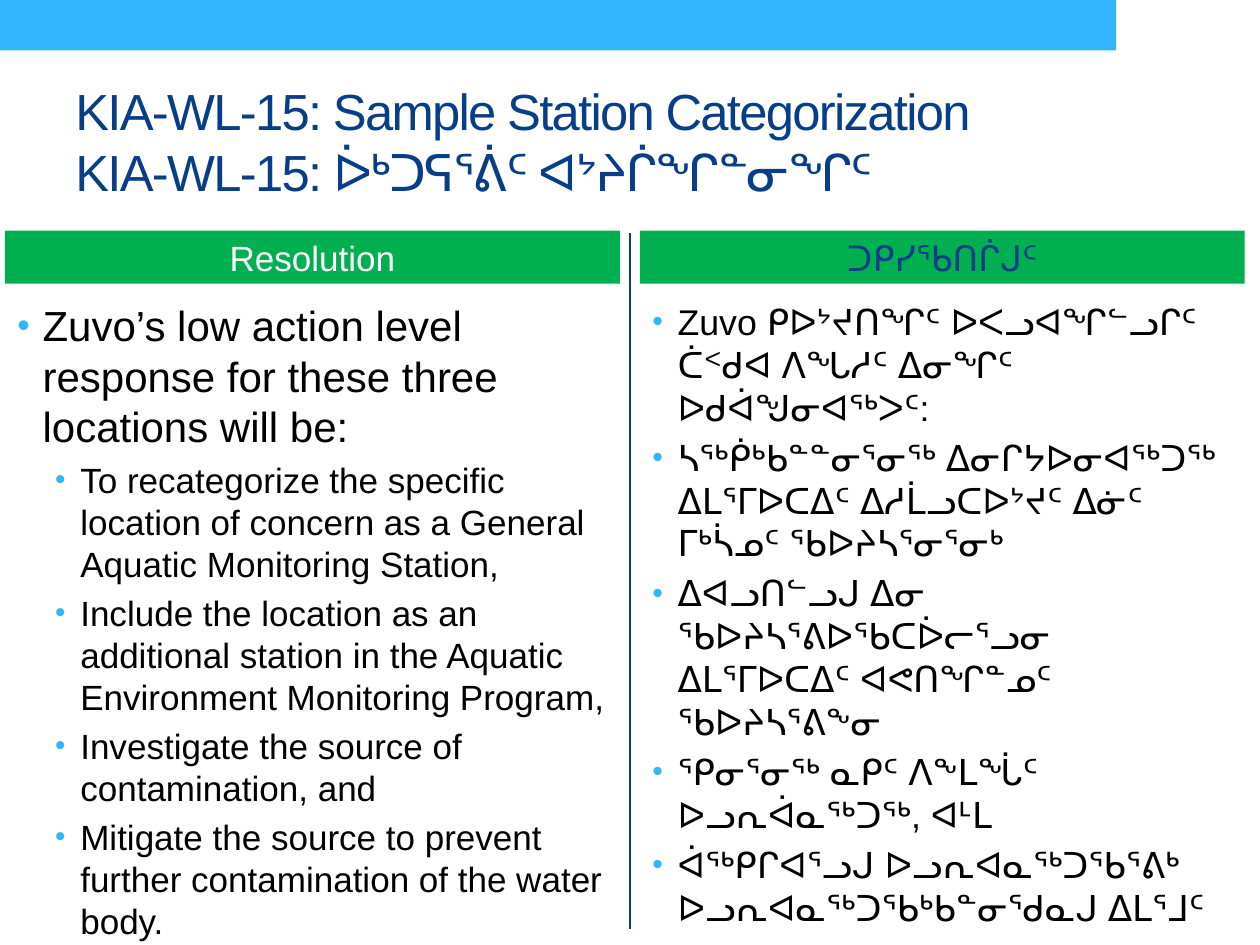
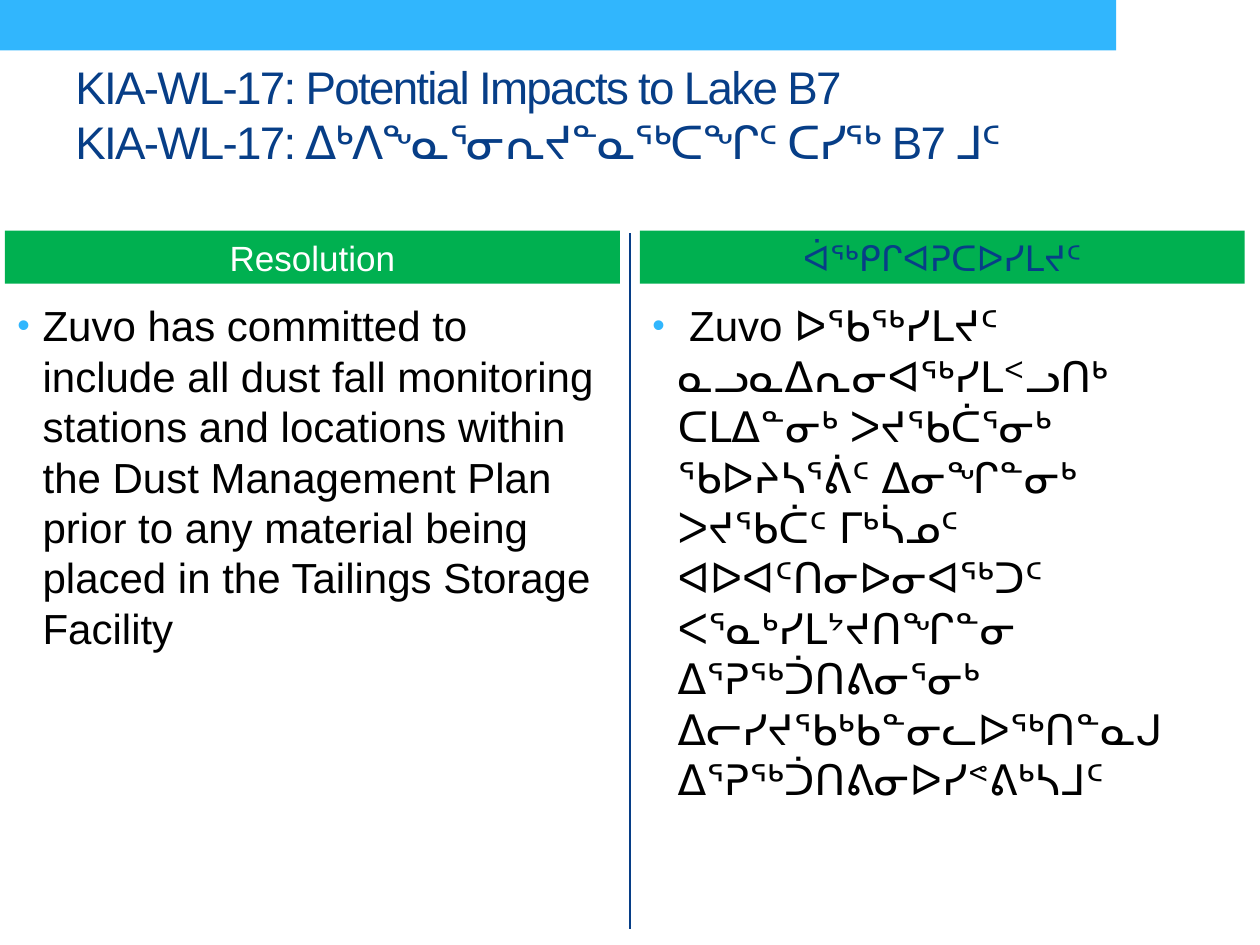
from pptx import Presentation
from pptx import util as u
from pptx.dml.color import RGBColor
from pptx.enum import shapes, text
from pptx.oxml.ns import qn
from lxml import etree

SKY = RGBColor(0x31, 0xB6, 0xFD)
NAVY = RGBColor(0x07, 0x3E, 0x87)
GREEN = RGBColor(0x00, 0xB0, 0x50)
WHITE = RGBColor(0xFF, 0xFF, 0xFF)
BLACK = RGBColor(0x00, 0x00, 0x00)
FONT = "Arial"

# Boxes in centimetres: left, top, width, height
BAND = (0, 0, 22.5, 1.02)
TITLE = (1.27, 1.47, 22.86, 2.74)
LEFT_COLUMN = (0.1, 4.65, 12.4, 14.07)
RIGHT_COLUMN = (12.9, 4.65, 12.19, 14.07)
DIVIDER_X, DIVIDER_TOP, DIVIDER_BOTTOM = 12.7, 4.7, 18.72
HEADING_HEIGHT = 1.07
BODY_OFFSET = 1.27
BULLET_HANG = 0.51
LEVEL_INDENTS = (0.51, 1.27)


def lengths(box):
    return [u.Cm(value) for value in box]


def write(paragraph, content, size, color, spacing=None):
    """Fill a paragraph with one format; a vertical tab is a line break."""
    paragraph.text = content
    for run in paragraph.runs:
        run.font.name = FONT
        run.font.size = u.Pt(size)
        run.font.color.rgb = color
        if spacing is not None:
            run.font._element.set("spc", str(spacing))


def add_bullet(paragraph, level):
    properties = paragraph._p.get_or_add_pPr()
    properties.set("marL", str(u.Cm(LEVEL_INDENTS[level])))
    properties.set("indent", str(-u.Cm(BULLET_HANG)))
    color = etree.SubElement(properties, qn("a:buClr"))
    etree.SubElement(color, qn("a:srgbClr"), val=str(SKY))
    etree.SubElement(properties, qn("a:buSzPct"), val="85000")
    etree.SubElement(properties, qn("a:buFont"), typeface=FONT)
    etree.SubElement(properties, qn("a:buChar"), char="•")


def add_bar(slide, box, color):
    bar = slide.shapes.add_shape(shapes.MSO_SHAPE.RECTANGLE, *lengths(box))
    bar.shadow.inherit = False
    bar.fill.solid()
    bar.fill.fore_color.rgb = color
    bar.line.fill.background()
    return bar


def add_frame(slide, box, anchor):
    frame = slide.shapes.add_textbox(*lengths(box)).text_frame
    frame.word_wrap = True
    frame.vertical_anchor = anchor
    return frame


def add_backdrop(slide):
    # Top band and the line between the columns
    add_bar(slide, BAND, SKY)
    divider = slide.shapes.add_connector(
        shapes.MSO_CONNECTOR.STRAIGHT,
        u.Cm(DIVIDER_X), u.Cm(DIVIDER_TOP), u.Cm(DIVIDER_X), u.Cm(DIVIDER_BOTTOM))
    divider.line.color.rgb = NAVY
    divider.line.width = u.Pt(1.5)
    etree.SubElement(divider._element.spPr, qn("a:effectLst"))


def add_title(slide, content, size, lift):
    left, top, width, height = TITLE
    frame = add_frame(slide, (left, top - lift, width, height), text.MSO_ANCHOR.MIDDLE)
    write(frame.paragraphs[0], content, size, NAVY, spacing=-100)


def add_column(slide, box, heading, heading_color, items):
    """Place a heading bar and bullets; items are (level, size, content)."""
    left, top, width, height = box
    # Heading
    bar = add_bar(slide, (left, top, width, HEADING_HEIGHT), GREEN)
    bar.text_frame.word_wrap = True
    bar.text_frame.vertical_anchor = text.MSO_ANCHOR.MIDDLE
    paragraph = bar.text_frame.paragraphs[0]
    paragraph.alignment = text.PP_ALIGN.CENTER
    write(paragraph, heading, 20, heading_color)
    # Bullets
    frame = add_frame(slide, (left, top + BODY_OFFSET, width, height - BODY_OFFSET),
                      text.MSO_ANCHOR.TOP)
    for index, (level, size, content) in enumerate(items):
        paragraph = frame.add_paragraph() if index else frame.paragraphs[0]
        if index:
            paragraph.space_before = u.Pt(round(size * 0.2, 1))
        add_bullet(paragraph, level)
        write(paragraph, content, size, BLACK)


def add_resolution_slide(presentation, title, title_size, inuktitut_heading,
                         english, inuktitut, title_lift=0):
    slide = presentation.slides.add_slide(presentation.slide_layouts[6])
    add_backdrop(slide)
    add_title(slide, title, title_size, title_lift)
    add_column(slide, LEFT_COLUMN, "Resolution", WHITE, english)
    add_column(slide, RIGHT_COLUMN, inuktitut_heading, NAVY, inuktitut)


def main():
    presentation = Presentation()
    presentation.slide_width = u.Cm(25.4)
    presentation.slide_height = u.Cm(19.05)

    # Sample station categorization
    actions = (
        "To recategorize the specific location of concern as a General Aquatic Monitoring Station,",
        "Include the location as an additional station in the Aquatic Environment Monitoring Program,",
        "Investigate the source of contamination, and",
        "Mitigate the source to prevent further contamination of the water body.",
    )
    inuktitut_actions = (
        "Zuvo ᑭᐅᔾᔪᑎᖏᑦ ᐅᐸᓗᐊᖏᓪᓗᒋᑦ ᑖᑉᑯᐊ ᐱᖓᓱᑦ ᐃᓂᖏᑦ ᐅᑯᐋᖑᓂᐊᖅᐳᑦ:",
        "ᓴᖅᑮᒃᑲᓐᓐᓂᕐᓂᖅ ᐃᓂᒋᔭᐅᓂᐊᖅᑐᖅ ᐃᒪᕐᒥᐅᑕᐃᑦ ᐃᓱᒫᓗᑕᐅᔾᔪᑦ ᐃᓃᑦ ᒥᒃᓵᓄᑦ ᖃᐅᔨᓴᕐᓂᕐᓂᒃ",
        "ᐃᐊᓗᑎᓪᓗᒍ ᐃᓂ ᖃᐅᔨᓴᕐᕕᐅᖃᑕᐆᓕᕐᓗᓂ ᐃᒪᕐᒥᐅᑕᐃᑦ ᐊᕙᑎᖏᓐᓄᑦ ᖃᐅᔨᓴᕐᕕᖕᓂ",
        "ᕿᓂᕐᓂᖅ ᓇᑭᑦ ᐱᖕᒪᖔᑦ ᐅᓗᕆᐋᓇᖅᑐᖅ, ᐊᒻᒪ",
        "ᐋᖅᑭᒋᐊᕐᓗᒍ ᐅᓗᕆᐊᓇᖅᑐᖃᕐᕕᒃ ᐅᓗᕆᐊᓇᖅᑐᖃᒃᑲᓐᓂᖁᓇᒍ ᐃᒪᕐᒧᑦ",
    )
    add_resolution_slide(
        presentation,
        "KIA-WL-15: Sample Station Categorization\vKIA-WL-15: ᐆᒃᑐᕋᕐᕖᑦ ᐊᔾᔨᒌᖏᓐᓂᖏᑦ", 29,
        "ᑐᑭᓯᖃᑎᒌᒍᑦ",
        [(0, 24, "Zuvo’s low action level response for these three locations will be:")]
        + [(1, 20, action) for action in actions],
        [(0, 20.4, action) for action in inuktitut_actions])

    # Potential impacts to the lake
    add_resolution_slide(
        presentation,
        "KIA-WL-17: Potential Impacts to Lake B7\vKIA-WL-17: ᐃᒃᐱᖕᓇᕐᓂᕆᔪᓐᓇᖅᑕᖏᑦ ᑕᓯᖅ B7 ᒧᑦ", 26.1,
        "ᐋᖅᑭᒋᐊᕈᑕᐅᓯᒪᔪᑦ",
        [(0, 24, "Zuvo has committed to include all dust fall monitoring stations and locations "
                 "within the Dust Management Plan prior to any material being placed in the "
                 "Tailings Storage Facility")],
        [(0, 24, " Zuvo ᐅᖃᖅᓯᒪᔪᑦ ᓇᓗᓇᐃᕆᓂᐊᖅᓯᒪᑉᓗᑎᒃ ᑕᒪᐃᓐᓂᒃ ᐳᔪᖃᑖᕐᓂᒃ ᖃᐅᔨᓴᕐᕖᑦ ᐃᓂᖏᓐᓂᒃ "
                 "ᐳᔪᖃᑖᑦ ᒥᒃᓵᓄᑦ ᐊᐅᐊᑦᑎᓂᐅᓂᐊᖅᑐᑦ ᐸᕐᓇᒃᓯᒪᔾᔪᑎᖏᓐᓂ ᐃᕐᕈᖅᑑᑎᕕᓂᕐᓂᒃ "
                 "ᐃᓕᓯᔪᖃᒃᑲᓐᓂᓚᐅᖅᑎᓐᓇᒍ ᐃᕐᕈᖅᑑᑎᕕᓂᐅᓯᕝᕕᒃᓴᒧᑦ")],
        title_lift=0.55)

    presentation.save("out.pptx")


if __name__ == "__main__":
    main()
